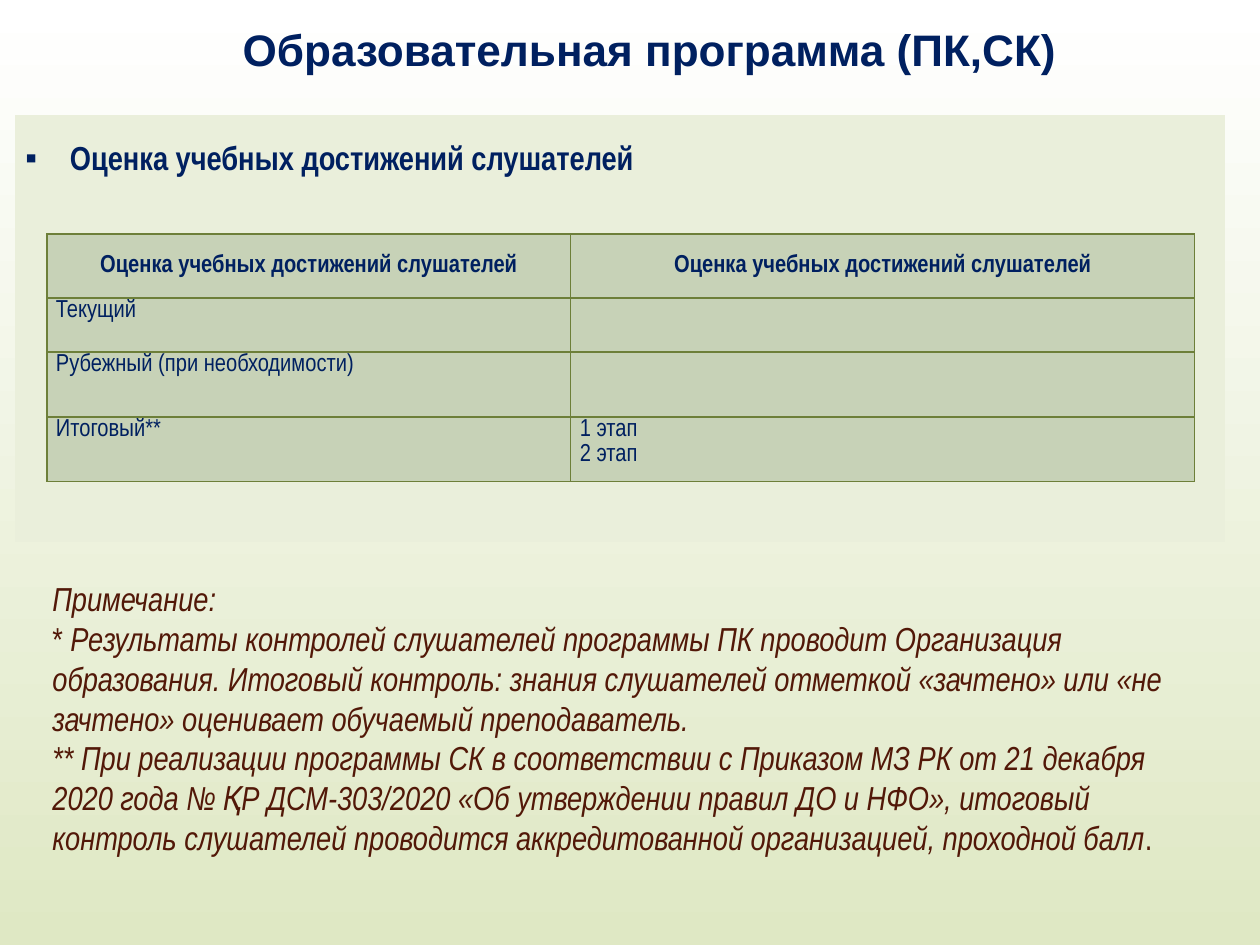
from lxml import etree
from pptx import Presentation
from pptx.dml.color import RGBColor
from pptx.enum.text import MSO_ANCHOR, PP_ALIGN
from pptx.oxml.ns import qn
from pptx.util import Pt

CENTER, LEFT = PP_ALIGN.CENTER, PP_ALIGN.LEFT
TOP, MIDDLE = MSO_ANCHOR.TOP, MSO_ANCHOR.MIDDLE
PX = 914400 // 126
COLORS = {
    "navy": "002060", "brown": "521808", "panel": "EAEFDB", "cell": "C7D2B7",
    "border": "6D7F39", "sky": "FFFFFF", "ground": "DFE8C4",
}

TITLE = "Образовательная программа (ПК,СК)"
HEADING = "Оценка учебных достижений слушателей"
CONTROLS = [
    (HEADING, HEADING),
    ("Текущий", ""),
    ("Рубежный (при необходимости)", ""),
    ("Итоговый**", "1 этап\n2 этап"),
]
# Each paragraph is a list of (text, italic) runs.
NOTE = [
    [("Примечание:", True)],
    [("*", False),
     (" Результаты контролей слушателей программы ПК проводит Организация "
      "образования. Итоговый контроль: знания слушателей отметкой «зачтено» "
      "или «не зачтено» оценивает обучаемый преподаватель.", True)],
    [("** При реализации программы СК в соответствии с Приказом МЗ РК от "
      "21 декабря 2020 года № ҚР ДСМ-303/2020 «Об утверждении правил ДО и НФО», "
      "итоговый контроль слушателей проводится аккредитованной организацией, "
      "проходной балл", True),
     (".", False)],
]

TITLE_BOX = (39, 16, 1221, 66)
NOTE_BOX = (40, 572, 1155, 295)
PANEL_AT, PANEL_COLS, PANEL_ROWS = (15, 115), [1210], [300, 127]
CONTROLS_AT, CONTROLS_COLS, CONTROLS_ROWS = (47, 234), [524, 624], [64, 54, 65, 65]
BULLET_INDENT = 48


def rgb(name):
    return RGBColor.from_string(COLORS[name])


def write(frame, text, size, color="navy", font="Arial Narrow", bold=False,
          align=LEFT, spacing=None):
    """Fill a frame from a string, or from paragraphs of (text, italic) runs."""
    if isinstance(text, str):
        text = [[(line, False)] for line in text.split("\n")]
    for index, runs in enumerate(text):
        paragraph = frame.add_paragraph() if index else frame.paragraphs[0]
        paragraph.alignment = align
        if spacing:
            paragraph.line_spacing = spacing
        for words, italic in runs:
            run = paragraph.add_run()
            run.text = words
            run.font.size, run.font.name = Pt(size), font
            run.font.bold, run.font.italic = bold, italic
            run.font.color.rgb = rgb(color)


def add_text(slide, box, text, size, anchor=TOP, **style):
    frame = slide.shapes.add_textbox(*(v * PX for v in box)).text_frame
    frame.word_wrap = True
    frame.vertical_anchor = anchor
    write(frame, text, size, **style)


def set_borders(cell, color):
    """Outline a cell in a colour, or remove its lines when colour is None."""
    properties = cell._tc.get_or_add_tcPr()
    for index, side in enumerate(("lnL", "lnR", "lnT", "lnB")):
        line = etree.Element(qn(f"a:{side}"), w=str(Pt(0.75)))
        if color:
            fill = etree.SubElement(line, qn("a:solidFill"))
            etree.SubElement(fill, qn("a:srgbClr"), val=COLORS[color])
        else:
            etree.SubElement(line, qn("a:noFill"))
        properties.insert(index, line)


def add_grid(slide, at, widths, heights, fill, border, inset):
    size = (sum(widths), sum(heights))
    table = slide.shapes.add_table(
        len(heights), len(widths), *(v * PX for v in at + size)).table
    table.first_row = table.horz_banding = False
    for column, width in zip(table.columns, widths):
        column.width = width * PX
    for row, height in zip(table.rows, heights):
        row.height = height * PX
    for cell in table.iter_cells():
        cell.margin_left = cell.margin_right = inset * PX
        cell.margin_top = cell.margin_bottom = 0
        cell.fill.solid()
        cell.fill.fore_color.rgb = rgb(fill)
        set_borders(cell, border)
    return table


def add_bullet(paragraph, mark):
    properties = paragraph._p.get_or_add_pPr()
    properties.set("marL", str(BULLET_INDENT * PX))
    properties.set("indent", str(-BULLET_INDENT * PX))
    etree.SubElement(properties, qn("a:buSzPct"), val="75000")
    etree.SubElement(properties, qn("a:buChar"), char=mark)


def paint_background(slide):
    fill = slide.background.fill
    fill.gradient()
    fill.gradient_angle = 270
    for stop, name, position in zip(fill.gradient_stops, ("sky", "ground"), (0, 1)):
        stop.color.rgb = rgb(name)
        stop.position = position


def main():
    deck = Presentation()
    deck.slide_width, deck.slide_height = 1260 * PX, 945 * PX
    slide = deck.slides.add_slide(deck.slide_layouts[6])
    paint_background(slide)

    add_text(slide, TITLE_BOX, TITLE, 25.2, anchor=MIDDLE,
             font="Arial", bold=True, align=CENTER)

    panel = add_grid(slide, PANEL_AT, PANEL_COLS, PANEL_ROWS, "panel", None, 7)
    heading = panel.cell(0, 0)
    heading.margin_top = 31 * PX
    write(heading.text_frame, HEADING, 19, bold=True)
    add_bullet(heading.text_frame.paragraphs[0], "▪")

    controls = add_grid(slide, CONTROLS_AT, CONTROLS_COLS, CONTROLS_ROWS,
                        "cell", "border", 9)
    for r, texts in enumerate(CONTROLS):
        for c, text in enumerate(texts):
            cell = controls.cell(r, c)
            if r == 0:
                cell.vertical_anchor = MIDDLE
                write(cell.text_frame, text, 14, bold=True, align=CENTER)
            elif text:
                write(cell.text_frame, text, 14, spacing=1.07)

    add_text(slide, NOTE_BOX, NOTE, 19, color="brown")
    deck.save("out.pptx")


if __name__ == "__main__":
    main()
